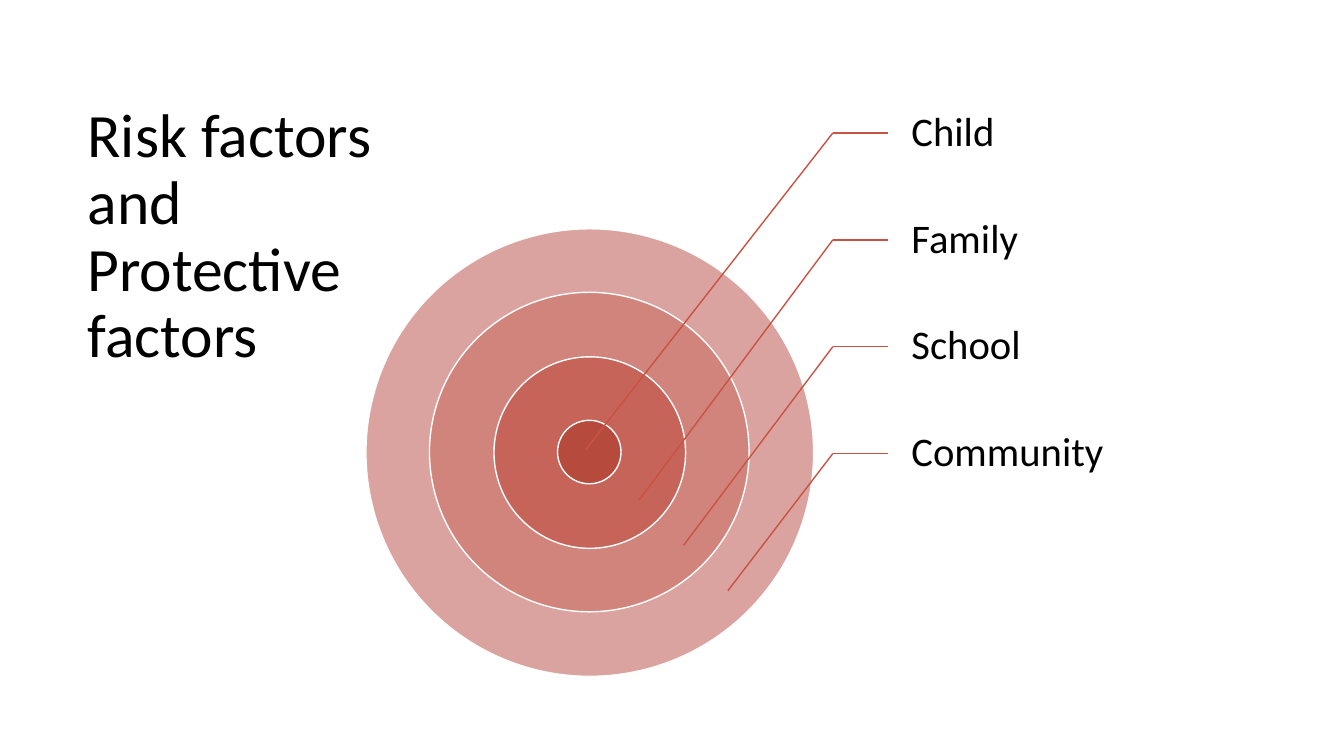
from pptx import Presentation
from pptx.dml.color import RGBColor
from pptx.enum.shapes import MSO_CONNECTOR, MSO_SHAPE
from pptx.enum.text import MSO_ANCHOR
from pptx.oxml.ns import qn
from pptx.util import Emu, Pt

STRAIGHT = MSO_CONNECTOR.STRAIGHT
OVAL = MSO_SHAPE.OVAL
TOP, MIDDLE = MSO_ANCHOR.TOP, MSO_ANCHOR.MIDDLE
LEFT_SIDE = 1

FONT = "Calibri"
BLACK, WHITE, LEADER_RED = "000000", "FFFFFF", "C95242"
# From the innermost ring outwards: label, ring fill, leader target (x, y in the box)
LEVELS = [
    ("Child", "B64A3C", (218, 367)),
    ("Family", "C66459", (271, 417)),
    ("School", "D0847C", (315, 462)),
    ("Community", "DBA39F", (359, 507)),
]


def px(length):
    """100 px to the inch."""
    return Emu(length * 9144)


def color(hex_code):
    return RGBColor.from_string(hex_code)


def add_text(slide, text, box, size=29, anchor=TOP, insets=(10, 5, 10, 5), space_after=0):
    text_box = slide.shapes.add_textbox(*map(px, box))
    frame = text_box.text_frame
    frame.word_wrap = True
    frame.vertical_anchor = anchor
    frame.margin_left, frame.margin_top, frame.margin_right, frame.margin_bottom = map(px, insets)
    paragraph = frame.paragraphs[0]
    paragraph.line_spacing = 0.9
    paragraph.space_after = Pt(space_after)
    run = paragraph.add_run()
    run.text = text
    run.font.name = FONT
    run.font.size = Pt(size)
    run.font.color.rgb = color(BLACK)
    return text_box


def add_line(slide, start, end):
    line = slide.shapes.add_connector(STRAIGHT, *map(px, (*start, *end)))
    line.line.color.rgb = color(LEADER_RED)
    line.line.width = Pt(1)
    properties = line._element.spPr
    properties.append(properties.makeelement(qn("a:effectLst"), {}))
    return line


def add_rings(slide, box):
    """Concentric discs, each ring as wide as the core."""
    left, top, size = box
    core, step = 63, 127
    for index in reversed(range(len(LEVELS))):
        diameter = core + step * index
        offset = (size - diameter) // 2
        disc = slide.shapes.add_shape(
            OVAL, px(left + offset), px(top + offset), px(diameter), px(diameter))
        disc.shadow.inherit = False
        disc.fill.solid()
        disc.fill.fore_color.rgb = color(LEVELS[index][1])
        disc.line.color.rgb = color(WHITE)
        disc.line.width = Pt(1)


def add_labels(slide, box):
    """Equal rows of labels, each with a bent leader to its ring."""
    left, top, width, height = box
    label_left, label_width = left + 518, width - 518
    elbow_x = label_left - 55
    for index, (name, _, (target_x, target_y)) in enumerate(LEVELS):
        row_top = top + index * height // len(LEVELS)
        row_height = height // len(LEVELS)
        label = add_text(slide, name, (label_left, row_top, label_width, row_height),
                         anchor=MIDDLE, insets=(23, 4, 4, 4), space_after=10)
        elbow = (elbow_x, row_top + row_height // 2)
        stub = add_line(slide, elbow, (label_left, elbow[1]))
        stub.end_connect(label, LEFT_SIDE)
        add_line(slide, elbow, (left + target_x, top + target_y))


def main():
    presentation = Presentation()
    presentation.slide_width, presentation.slide_height = px(1333), px(750)
    slide = presentation.slides.add_slide(presentation.slide_layouts[6])

    # Target diagram
    add_rings(slide, (363, 227, 444))
    add_labels(slide, (363, 79, 740, 425))

    # Title
    add_text(slide, "Risk factors and Protective factors", (77, 99, 318, 352), size=44)

    presentation.save("out.pptx")


if __name__ == "__main__":
    main()
